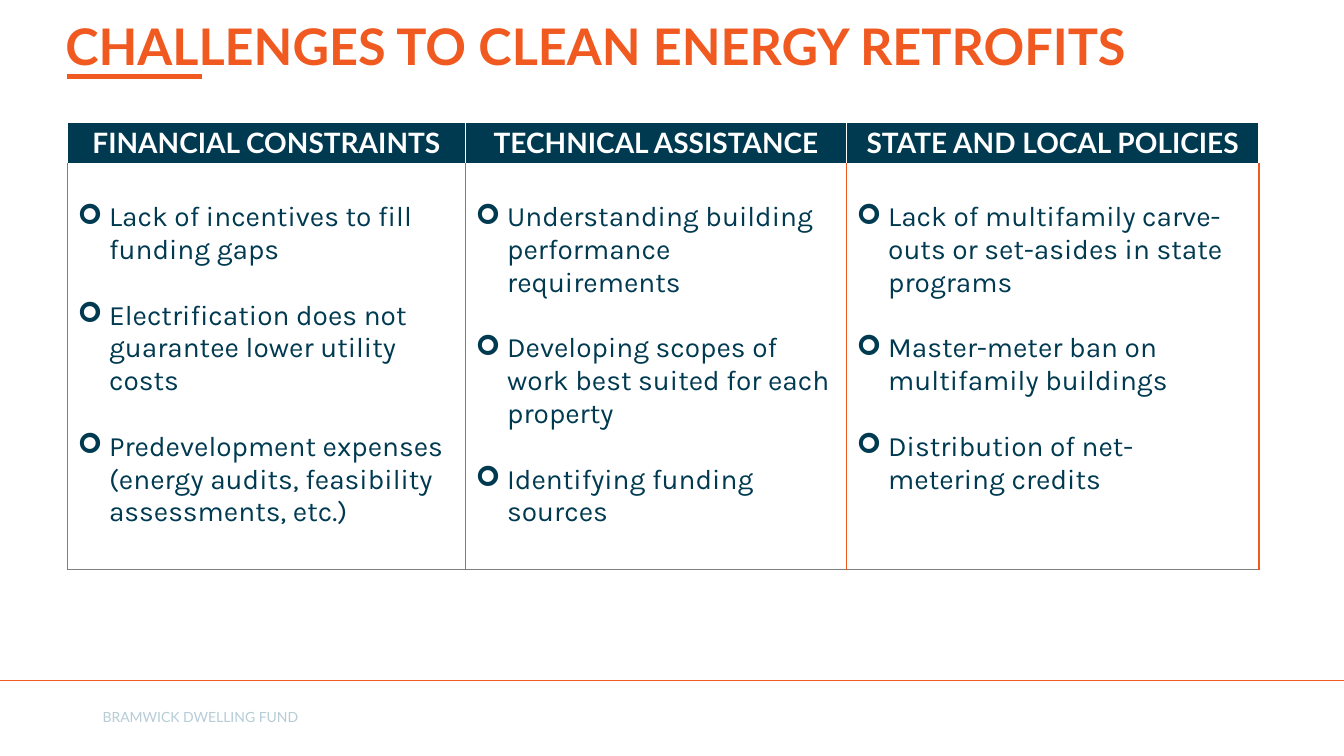
from lxml.etree import SubElement
from pptx import Presentation
from pptx.dml.color import RGBColor
from pptx.enum.shapes import MSO_CONNECTOR
from pptx.enum.text import MSO_ANCHOR, PP_ALIGN
from pptx.oxml import parse_xml
from pptx.oxml.ns import nsdecls, qn
from pptx.util import Pt

ORANGE, NAVY, WHITE, GREY, MIST = "F05A21", "003A51", "FFFFFF", "7F7F7F", "B6CCD6"
WIDTH, HEIGHT = 960, 540
LINE = 23.4  # height of one line of body text

COLUMNS = [
    ("FINANCIAL CONSTRAINTS", 284.4, [
        "Lack of incentives to fill funding gaps",
        "Electrification does not guarantee lower utility costs",
        "Predevelopment expenses (energy audits, feasibility assessments, etc.)"]),
    ("TECHNICAL ASSISTANCE", 272.2, [
        "Understanding building performance requirements",
        "Developing scopes of work best suited for each property",
        "Identifying funding sources"]),
    ("STATE AND LOCAL POLICIES", 294.5, [
        "Lack of multifamily carve-outs or set-asides in state programs",
        "Master-meter ban on multifamily buildings",
        "Distribution of net-metering credits"]),
]
# Left, right and bottom border of each body cell
BODY_BORDERS = [(GREY, GREY, GREY), (GREY, ORANGE, GREY), (ORANGE, ORANGE, GREY)]


def color(value):
    return RGBColor.from_string(value)


def style(para, name, size, value, bold=False):
    for span in para.runs:
        span.font.name = name
        span.font.size = Pt(size)
        span.font.bold = bold
        span.font.color.rgb = color(value)


def add_text(page, left, top, width, height, text, size, value, bold=False):
    box = page.shapes.add_textbox(Pt(left), Pt(top), Pt(width), Pt(height))
    frame = box.text_frame
    frame.word_wrap = True
    frame.vertical_anchor = MSO_ANCHOR.MIDDLE
    frame.text = text
    style(frame.paragraphs[0], "Lato", size, value, bold)
    return frame.paragraphs[0]


def add_rule(page, left, right, top, value, weight):
    rule = page.shapes.add_connector(
        MSO_CONNECTOR.STRAIGHT, Pt(left), Pt(top), Pt(right), Pt(top))
    rule.line.color.rgb = color(value)
    rule.line.width = Pt(weight)
    SubElement(rule._element.spPr, qn("a:effectLst"))


def set_borders(cell, left, right, top, bottom):
    properties = cell._tc.get_or_add_tcPr()
    sides = zip(("lnL", "lnR", "lnT", "lnB"), (left, right, top, bottom))
    for index, (side, value) in enumerate(sides):
        properties.insert(index, parse_xml(
            f'<a:{side} {nsdecls("a")} w="{Pt(1)}"><a:solidFill>'
            f'<a:srgbClr val="{value}"/></a:solidFill></a:{side}>'))


def add_bullet(para):
    properties = para._p.get_or_add_pPr()
    properties.set("marL", str(Pt(22.5)))
    properties.set("indent", str(-Pt(22.5)))
    SubElement(properties, qn("a:buFont"), typeface="Wingdings")
    SubElement(properties, qn("a:buChar"), char="➢")


def fill_header(cell, text):
    cell.fill.solid()
    cell.fill.fore_color.rgb = color(NAVY)
    set_borders(cell, WHITE, WHITE, WHITE, WHITE)
    cell.margin_top = cell.margin_bottom = Pt(2.7)
    cell.text = text
    para = cell.text_frame.paragraphs[0]
    para.alignment = PP_ALIGN.CENTER
    style(para, "Lato", 20, WHITE, True)


def fill_body(cell, items, borders):
    left, right, bottom = borders
    cell.fill.background()
    set_borders(cell, left, right, WHITE, bottom)
    cell.margin_top = Pt(3.6 + LINE)
    frame = cell.text_frame
    for index, item in enumerate(items):
        para = frame.add_paragraph() if index else frame.paragraphs[0]
        para.text = item
        if index:
            para.space_before = Pt(LINE)
        add_bullet(para)
        style(para, "Karla", 20, NAVY)


def add_challenges(page, left, top, header_height, body_height):
    width = sum(column[1] for column in COLUMNS)
    table = page.shapes.add_table(
        2, len(COLUMNS), Pt(left), Pt(top), Pt(width),
        Pt(header_height + body_height)).table
    table.horz_banding = False
    table.rows[0].height = Pt(header_height)
    table.rows[1].height = Pt(body_height)
    for index, (heading, column_width, items) in enumerate(COLUMNS):
        table.columns[index].width = Pt(column_width)
        fill_header(table.cell(0, index), heading)
        fill_body(table.cell(1, index), items, BODY_BORDERS[index])


def add_title(page, left, top, width, height):
    para = add_text(page, left, top, width, height,
                    "CHALLENGES TO CLEAN ENERGY RETROFITS", 36, ORANGE, True)
    para.line_spacing = 0.9
    add_rule(page, left + 8.6, left + 105, top + 72, ORANGE, 3)


def add_footer(page, top):
    add_rule(page, 0, WIDTH, top, "F15922", 0.5)
    add_text(page, 66.2, top + 14.4, 324, 23.8, "BRAMWICK DWELLING FUND", 10, MIST)


def main():
    deck = Presentation()
    deck.slide_width, deck.slide_height = Pt(WIDTH), Pt(HEIGHT)
    page = deck.slides.add_slide(deck.slide_layouts[6])
    add_title(page, 39.6, -17.3, 828, 104.4)
    add_challenges(page, 48.2, 87.1, 29.6, 290)
    add_footer(page, 486)
    deck.save("out.pptx")


if __name__ == "__main__":
    main()
